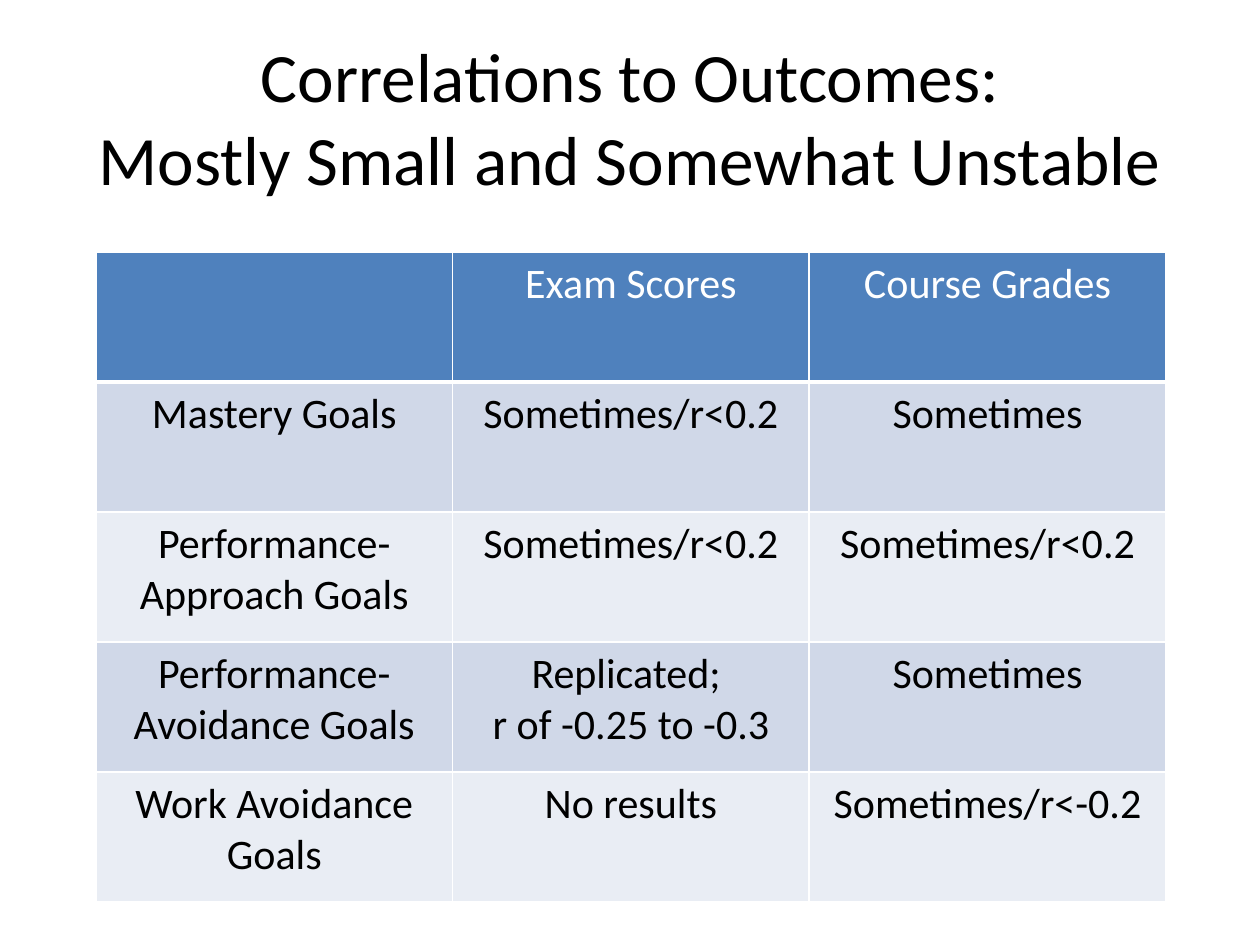
import lxml.etree
import pptx
import pptx.dml.color
import pptx.enum.text
import pptx.oxml.ns
import pptx.util

EMU_PER_PX = 914400 / 126
FONT = "Calibri"
WHITE, BLACK = "FFFFFF", "000000"
HEADER_FILL = "4F81BD"
BAND_FILLS = ("D0D8E8", "E9EDF4")

OUTCOME_ROWS = [
    ("", "Exam Scores", "Course Grades"),
    ("Mastery Goals", "Sometimes/r<0.2", "Sometimes"),
    ("Performance-Approach Goals", "Sometimes/r<0.2", "Sometimes/r<0.2"),
    ("Performance-Avoidance Goals", "Replicated; \vr of -0.25 to -0.3", "Sometimes"),
    ("Work Avoidance Goals", "No results", "Sometimes/r<-0.2"),
]


def px(length):
    return pptx.util.Emu(round(length * EMU_PER_PX))


def color(hex_string):
    return pptx.dml.color.RGBColor.from_string(hex_string)


def write_text(text_frame, text, *, size, text_color=BLACK,
               alignment=pptx.enum.text.PP_ALIGN.CENTER):
    """Fill the frame with one paragraph; a vertical tab breaks the line."""
    paragraph = text_frame.paragraphs[0]
    paragraph.text = text
    paragraph.alignment = alignment
    for font in [paragraph.font] + [run.font for run in paragraph.runs]:
        font.name = FONT
        font.size = pptx.util.Pt(size)
        font.bold = False
        font.color.rgb = color(text_color)


def set_borders(cell, widths):
    """Draw white borders; widths maps L, R, T and B, in that order, to points."""
    properties = cell._tc.get_or_add_tcPr()
    for index, (side, width) in enumerate(widths.items()):
        line = lxml.etree.Element(pptx.oxml.ns.qn(f"a:ln{side}"),
                                  w=str(pptx.util.Pt(width)))
        fill = lxml.etree.SubElement(line, pptx.oxml.ns.qn("a:solidFill"))
        lxml.etree.SubElement(fill, pptx.oxml.ns.qn("a:srgbClr"), val=WHITE)
        properties.insert(index, line)


def add_title(slide, left, top, width, height):
    shape = slide.shapes.add_textbox(px(left), px(top), px(width), px(height))
    shape.text_frame.word_wrap = True
    shape.text_frame.vertical_anchor = pptx.enum.text.MSO_ANCHOR.MIDDLE
    write_text(shape.text_frame,
               "Correlations to Outcomes:\vMostly Small and Somewhat Unstable",
               size=39.6)


def add_outcome_table(slide, left, top, width, height):
    row_count, column_count = len(OUTCOME_ROWS), len(OUTCOME_ROWS[0])
    table = slide.shapes.add_table(row_count, column_count, px(left), px(top),
                                   px(width), px(height)).table
    for column in table.columns:
        column.width = px(width / column_count)
    for row_index, texts in enumerate(OUTCOME_ROWS):
        table.rows[row_index].height = px(height / row_count)
        is_header = row_index == 0
        fill = HEADER_FILL if is_header else BAND_FILLS[(row_index - 1) % 2]
        widths = {"L": 1, "R": 1, "T": 3 if row_index == 1 else 1,
                  "B": 3 if is_header else 1}
        for column_index, text in enumerate(texts):
            cell = table.cell(row_index, column_index)
            cell.fill.solid()
            cell.fill.fore_color.rgb = color(fill)
            set_borders(cell, widths)
            write_text(cell.text_frame, text, size=24,
                       text_color=WHITE if is_header else BLACK)


def main():
    presentation = pptx.Presentation()
    presentation.slide_width, presentation.slide_height = px(1260), px(945)
    slide = presentation.slides.add_slide(presentation.slide_layouts[6])
    add_title(slide, 63, 38, 1134, 157)
    add_outcome_table(slide, 96, 252, 1070, 650)
    presentation.save("out.pptx")


if __name__ == "__main__":
    main()
